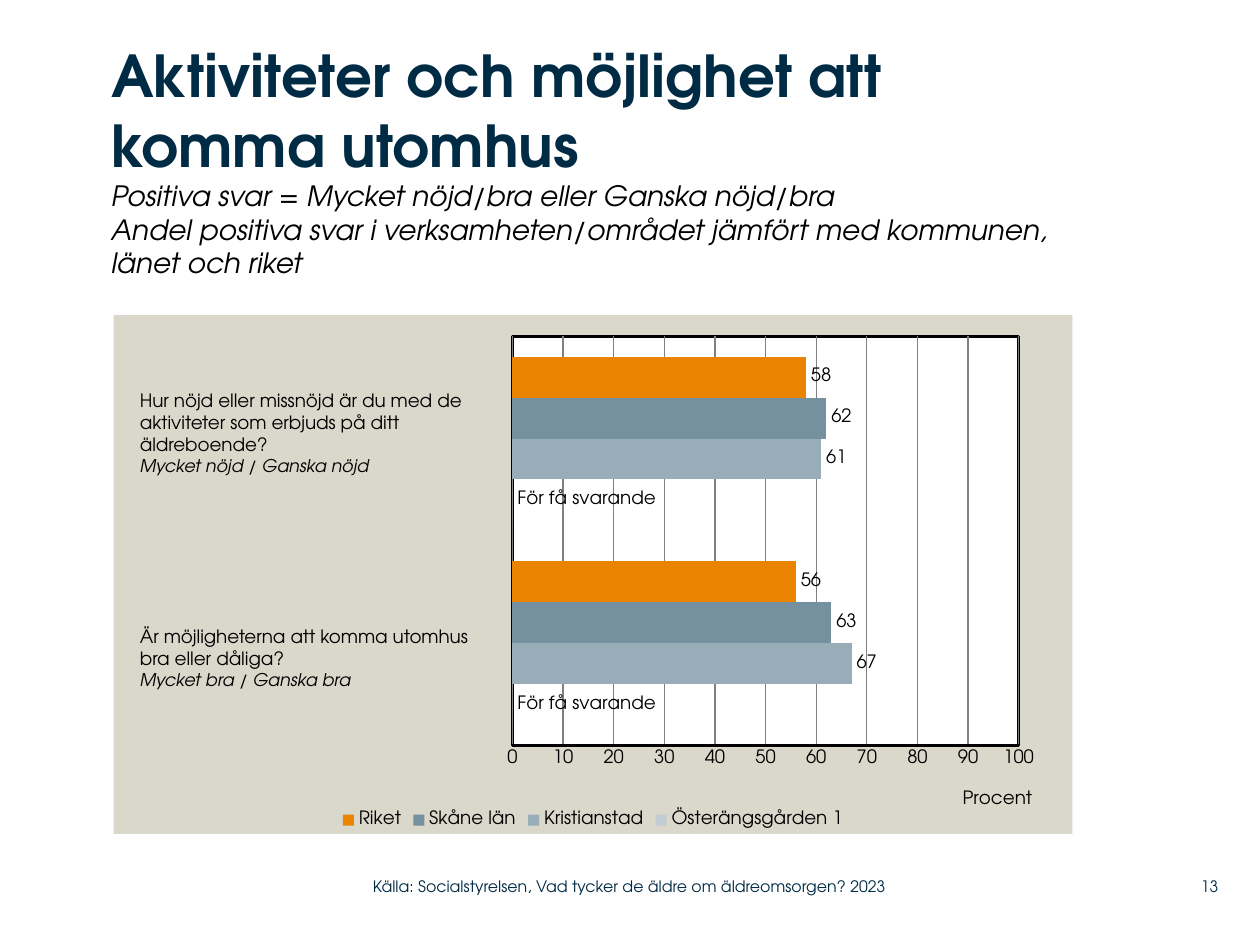
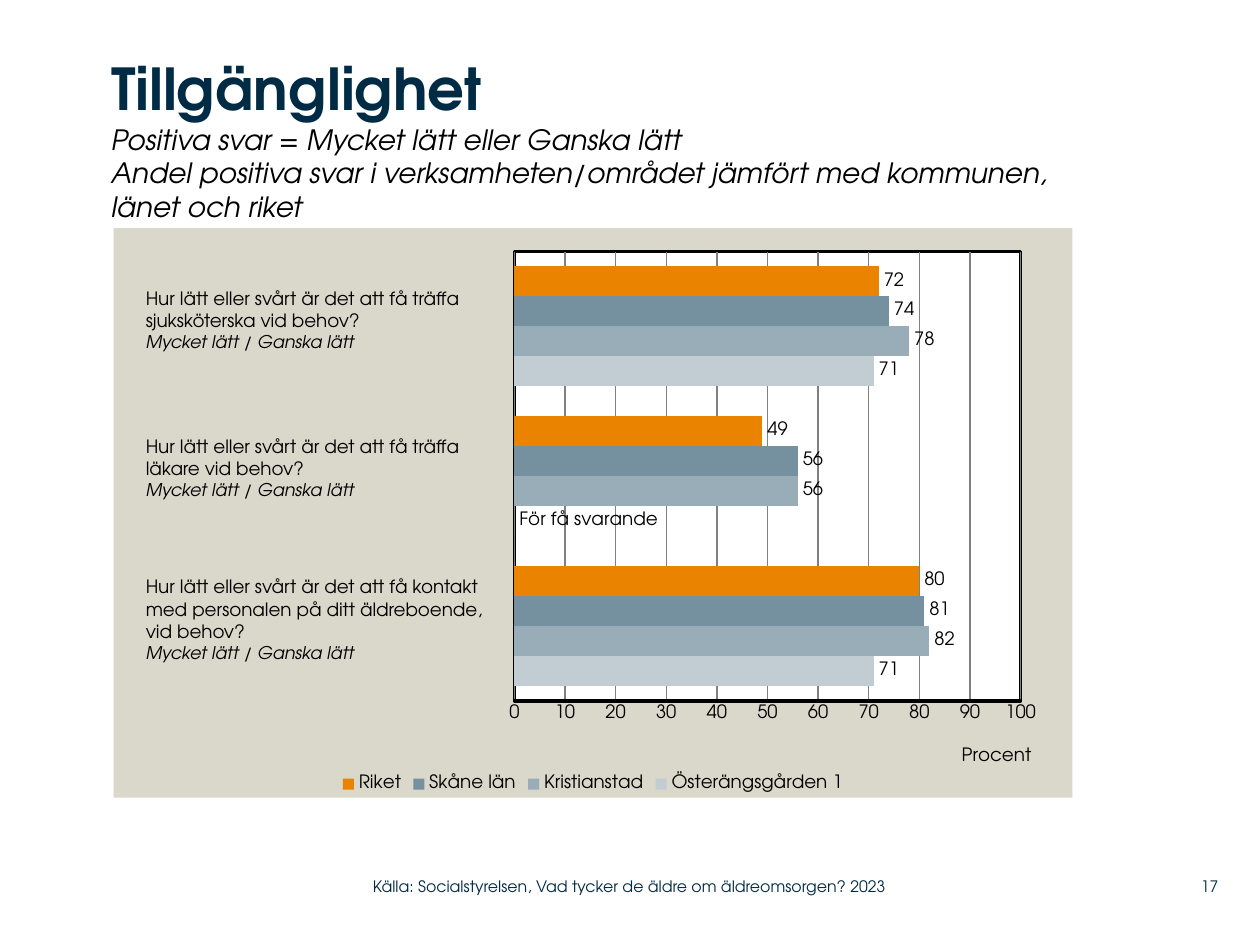
from pptx import Presentation
from pptx.chart.data import CategoryChartData
from pptx.dml.color import RGBColor
from pptx.enum.chart import XL_CHART_TYPE, XL_LABEL_POSITION, XL_LEGEND_POSITION, XL_TICK_MARK
from pptx.enum.text import MSO_ANCHOR, MSO_AUTO_SIZE, PP_ALIGN
from pptx.oxml import parse_xml
from pptx.oxml.ns import nsdecls, qn
from pptx.util import Cm, Pt

BARS = XL_CHART_TYPE.BAR_CLUSTERED
OUT_END = XL_LABEL_POSITION.OUTSIDE_END
BOTTOM = XL_LEGEND_POSITION.BOTTOM
NO_TICK = XL_TICK_MARK.NONE
TOP, MIDDLE = MSO_ANCHOR.TOP, MSO_ANCHOR.MIDDLE
LEFT, RIGHT = PP_ALIGN.LEFT, PP_ALIGN.RIGHT
NO_FIT, GROW = MSO_AUTO_SIZE.NONE, MSO_AUTO_SIZE.SHAPE_TO_FIT_TEXT

FONT = "TeX Gyre Adventor"
NAVY, BLACK, GREY, SAND, WHITE = "002B45", "000000", "808080", "DAD7CB", "FFFFFF"
SERIES = [("Österängsgården 1", "C2CDD3"), ("Kristianstad", "99ADB9"),
          ("Skåne län", "75909F"), ("Riket", "E98300")]
SOURCE = "Källa: Socialstyrelsen, Vad tycker de äldre om äldreomsorgen? 2023"
SCOPE = ("Andel positiva svar i verksamheten/området jämfört med kommunen, "
         "länet och riket")
FEW = "För få svarande"

# Values follow SERIES; categories run from the bottom up, 0 means too few answers
SLIDES = [
    dict(num="13", head="Aktiviteter och möjlighet att komma utomhus",
         sub="Positiva svar = Mycket nöjd/bra eller Ganska nöjd/bra",
         box=(2.24, 0.81, 19.81, 4.8), area=(2.29, 6.35, 19.33, 10.46),
         plot=0.416, unit=(0.882, 0.908), left=2.57,
         vals=[(0, 0), (67, 61), (63, 62), (56, 58)],
         asks=[(7.72, 2.49, ["Hur nöjd eller missnöjd är du med de aktiviteter "
                             "som erbjuds på ditt äldreboende?",
                             "Mycket nöjd / Ganska nöjd"]),
               (12.47, 2.06, ["Är möjligheterna att komma utomhus",
                              "bra eller dåliga?",
                              "Mycket bra / Ganska bra"])]),
    dict(num="17", head="Tillgänglighet",
         sub="Positiva svar = Mycket lätt eller Ganska lätt",
         box=(2.24, 1.07, 19.74, 3.53), area=(2.29, 4.6, 19.33, 11.48),
         plot=0.418, unit=(0.881, 0.904), left=2.69,
         vals=[(71, 0, 71), (82, 56, 78), (81, 56, 74), (80, 49, 72)],
         asks=[(5.66, 2.06, ["Hur lätt eller svårt är det att få träffa "
                             "sjuksköterska vid behov?",
                             "Mycket lätt / Ganska lätt"]),
               (8.64, 2.06, ["Hur lätt eller svårt är det att få träffa",
                             "läkare vid behov?",
                             "Mycket lätt / Ganska lätt"]),
               (11.48, 2.49, ["Hur lätt eller svårt är det att få kontakt",
                              "med personalen på ditt äldreboende,",
                              "vid behov?",
                              "Mycket lätt / Ganska lätt"])]),
]


def rgb(code):
    return RGBColor.from_string(code)


def style(para, size, color=BLACK, bold=False, italic=False, align=LEFT):
    para.alignment = align
    for run in para.runs:
        font = run.font
        font.name, font.size = FONT, Pt(size)
        font.bold, font.italic = bold, italic
        font.color.rgb = rgb(color)


prs = Presentation()
prs.slide_width, prs.slide_height = Cm(25.4), Cm(19.05)

for data in SLIDES:
    slide = prs.slides.add_slide(prs.slide_layouts[5])

    # Chart and its series
    table = CategoryChartData()
    table.categories = [str(i + 1) for i in range(len(data["vals"][0]))]
    for (name, color), vals in zip(SERIES, data["vals"]):
        table.add_series(name, vals)
    chart = slide.shapes.add_chart(BARS, *map(Cm, data["area"]), table).chart
    chart.has_title = False
    chart.font.name, chart.font.size = FONT, Pt(10.5)
    chart.font.color.rgb = rgb(BLACK)
    chart.has_legend = True
    chart.legend.position = BOTTOM
    chart.legend.include_in_layout = False
    group = chart.plots[0]
    group.gap_width, group.overlap, group.vary_by_categories = 100, 0, False
    for (name, color), vals, row in zip(SERIES, data["vals"], group.series):
        row.format.fill.solid()
        row.format.fill.fore_color.rgb = rgb(color)
        row.data_labels.show_value = True
        row.data_labels.position = OUT_END
        for i, val in enumerate(vals):
            if val == 0:
                label = row.points[i].data_label
                label.text_frame.text = FEW
                style(label.text_frame.paragraphs[0], 10.5)
                label.position = OUT_END

    # Axes
    chart.category_axis.visible = False
    axis = chart.value_axis
    axis.minimum_scale, axis.maximum_scale, axis.major_unit = 0, 100, 10
    axis.major_tick_mark = axis.minor_tick_mark = NO_TICK
    axis.format.line.color.rgb = rgb(BLACK)
    axis.format.line.width = Pt(2)
    axis.has_major_gridlines = True
    grid = axis.major_gridlines.format.line
    grid.color.rgb, grid.width = rgb(GREY), Pt(0.75)
    axis.has_title = True
    axis.axis_title.text_frame.text = "Procent"
    style(axis.axis_title.text_frame.paragraphs[0], 10.5)

    # Fixed places for the plot and the axis title
    space = chart._chartSpace
    area = space.find(".//" + qn("c:plotArea"))
    unit = axis.axis_title._element
    for part, at, spot in ((area, 0, (data["plot"], 0.041, 0.528, 0.789)),
                           (unit, 1, data["unit"])):
        old = part.find(qn("c:layout"))
        if old is not None:
            part.remove(old)
        tags = '<c:layoutTarget val="inner"/>' if part is area else ""
        tags += '<c:xMode val="edge"/><c:yMode val="edge"/>'
        tags += "".join(f'<c:{k} val="{v}"/>' for k, v in zip("xywh", spot))
        part.insert(at, parse_xml(f'<c:layout {nsdecls("c")}><c:manualLayout>{tags}'
                                  '</c:manualLayout></c:layout>'))

    # Sand background and white, framed plot
    frame = f'<a:ln w="25400"><a:solidFill><a:srgbClr val="{BLACK}"/></a:solidFill></a:ln>'
    back, pane = [parse_xml(f'<c:spPr {nsdecls("c", "a")}><a:solidFill>'
                            f'<a:srgbClr val="{fill}"/></a:solidFill>{line}</c:spPr>')
                  for fill, line in ((SAND, "<a:ln><a:noFill/></a:ln>"), (WHITE, frame))]
    space.find(qn("c:txPr")).addprevious(back)
    area.append(pane)

    # Title with subtitle lines
    title = slide.shapes.title
    title.left, title.top, title.width, title.height = map(Cm, data["box"])
    text = title.text_frame
    text.margin_left = text.margin_right = text.margin_top = text.margin_bottom = 0
    text.vertical_anchor, text.auto_size, text.word_wrap = TOP, NO_FIT, True
    text.text = "\n".join([data["head"], data["sub"], SCOPE])
    style(text.paragraphs[0], 33, NAVY, bold=True)
    for para in text.paragraphs[1:]:
        style(para, 16, italic=True)

    # Questions beside the bars
    for top, high, lines in data["asks"]:
        box = slide.shapes.add_textbox(Cm(data["left"]), Cm(top), Cm(7.65), Cm(high))
        text = box.text_frame
        text.word_wrap, text.auto_size = True, GROW
        text.text = "\n".join(lines)
        for para in text.paragraphs[:-1]:
            style(para, 10.5)
        style(text.paragraphs[-1], 10, italic=True)

    # Footer: page number and source
    for left, wide, words, align in ((23.37, 1.19, data["num"], RIGHT),
                                     (7.52, 11.25, SOURCE, LEFT)):
        box = slide.shapes.add_textbox(Cm(left), Cm(17.5), Cm(wide), Cm(0.74))
        text = box.text_frame
        text.margin_left = text.margin_right = text.margin_top = text.margin_bottom = 0
        text.word_wrap, text.vertical_anchor = True, MIDDLE
        text.text = words
        style(text.paragraphs[0], 9, NAVY, align=align)

prs.save("out.pptx")
